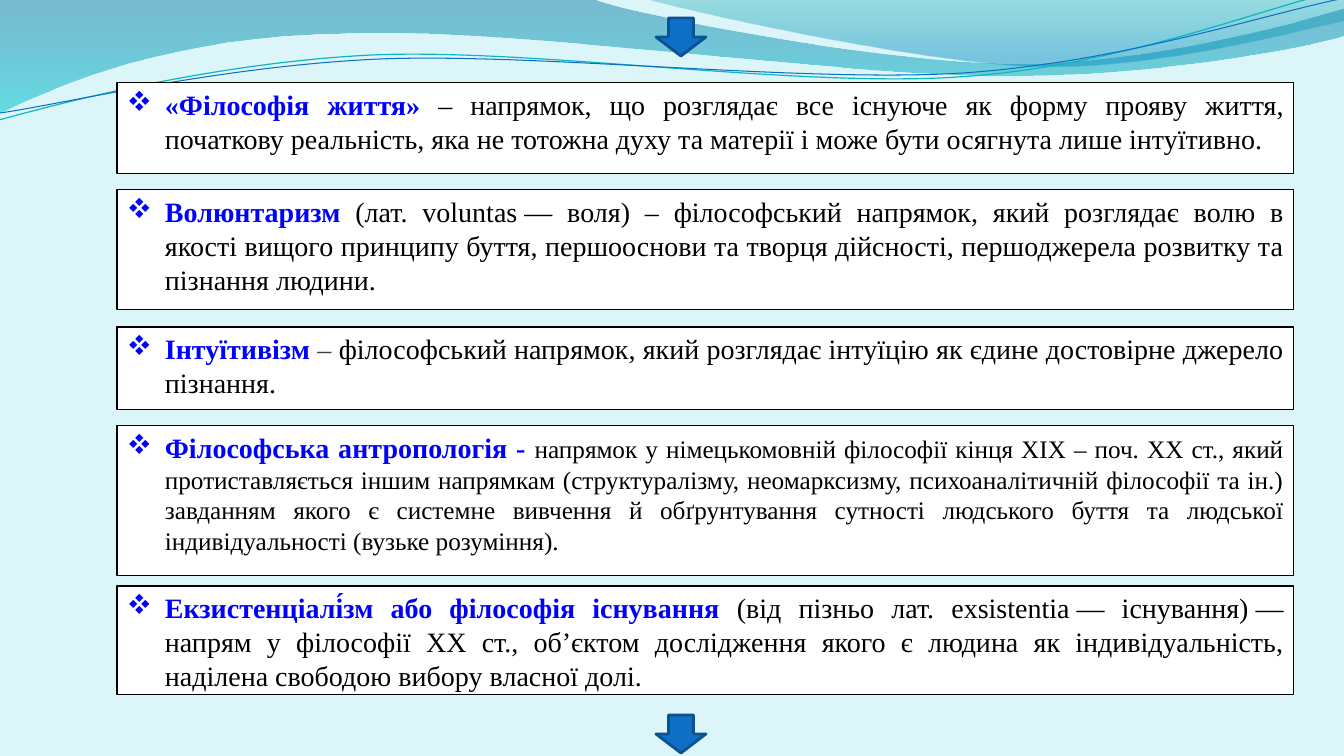
from math import cos, radians, sin
from lxml.etree import SubElement
from pptx import Presentation
from pptx.dml.color import RGBColor
from pptx.enum.shapes import MSO_SHAPE as Preset
from pptx.enum.text import MSO_ANCHOR as Anchor, PP_ALIGN as Align
from pptx.oxml.ns import qn
from pptx.util import Pt

# Content: top, height and spans (text, colour, size, bold) of each definition
BLUE, BLACK, GREY = "0000FF", "000000", "404040"
DEFINITIONS = [
    (83, 91, [
        ("«Філософія життя» ", BLUE, 20, True),
        ("– напрямок, що розглядає все існуюче як форму прояву життя, початкову реальність, "
         "яка не тотожна духу та матерії і може бути осягнута лише інтуїтивно.", BLACK, 20, False)]),
    (190, 120, [
        ("Волюнтаризм ", BLUE, 20, True),
        ("(лат. voluntas — воля) – філософський напрямок, який розглядає волю в якості вищого "
         "принципу буття, першооснови та творця дійсності, першоджерела розвитку та пізнання "
         "людини.", BLACK, 20, False)]),
    (327, 83, [
        ("Інтуїтивізм", BLUE, 20, True),
        (" – ", GREY, 20, False),
        ("філософський напрямок, який розглядає інтуїцію як єдине достовірне джерело пізнання.",
         BLACK, 20, False)]),
    (426, 150, [
        ("Філософська антропологія - ", BLUE, 20, True),
        ("напрямок у німецькомовній філософії кінця ХІХ – поч. ХХ ст., який протиставляється "
         "іншим напрямкам (структуралізму, неомарксизму, психоаналітичній філософії та ін.) "
         "завданням якого є системне вивчення й обґрунтування сутності людського буття та "
         "людської індивідуальності (вузьке розуміння).", BLACK, 18, False)]),
    (586, 109, [
        ("Екзистенціалі́зм або філософія існування ", BLUE, 20, True),
        ("(від пізньо лат. exsistentia — існування) — напрям у філософії ХХ ст., об’єктом "
         "дослідження якого є людина як індивідуальність, наділена свободою вибору власної "
         "долі.", BLACK, 20, False)]),
]
DASH_GAP = chr(160)  # keeps a dash on the line of the word before it
GLUED_DASHES = ("voluntas —", "exsistentia —", ") —")
ARROW_TOPS = [715, 18]

# Outlines: frame, then a start point, lines (one point) and curves (three points)
WAVES = [
    ((-1, -1, 1347, 115),
     [(-1, 0), [(592, -1)],
      [(639, 17), (892, 64), (1019, 64)], [(1146, 64), (1288, 26), (1344, 9)],
      [(1346, 36)],
      [(1322, 44), (1169, 77), (1002, 76)], [(836, 76), (513, 28), (346, 34)],
      [(173, 36), (61, 84), (-1, 114)], [(0, 0)]],
     [(0, "0074A1", 45), (1, "00C6CF", 55)]),
    ((644, -1, 700, 71),
     [(644, -1), [(684, 11), (916, 62), (1033, 66)], [(1150, 70), (1292, 32), (1344, 21)],
      [(1344, 0)], [(644, -1)]],
     [(0, "00A1A9", 30), (0.8, "008BBF", 45)]),
]
STRANDS = [
    ((-3, 22, 1347, 72),
     [(-1, 120), [(65, 102), (213, 63), (372, 55)], [(531, 48), (796, 88), (958, 77)],
      [(1119, 67), (1262, 8), (1342, -10)]], "0AB8BF", 0.85),
    ((-2, 30, 1349, 58),
     [(0, 113), [(64, 104), (220, 66), (381, 59)], [(541, 53), (802, 83), (963, 73)],
      [(1124, 62), (1265, 14), (1345, -2)]], "0F6FC6", 0.75),
]
STRAND_TURN = -2.7
SCALE = 12192000 / 1344


def px(length):
    return round(length * SCALE)


def rgb(value):
    return RGBColor.from_string(value)


def style(shape, fill=None, line=None, width=0.75):
    shape.shadow.inherit = False
    for part, colour in ((shape.fill, fill), (shape.line.fill, line)):
        if colour:
            part.solid()
            part.fore_color.rgb = rgb(colour)
        else:
            part.background()
    if line:
        shape.line.width = Pt(width)


def outline(page, frame, route, closed, turn=0):
    left, top, width, height = frame
    # The frame's rectangle sets place and size; its corners give way to the curves
    builder = page.shapes.build_freeform(px(left), px(top), 1.0)
    builder.add_line_segments([(px(left + width), px(top)),
                               (px(left + width), px(top + height))], close=False)
    shape = builder.convert_to_shape()
    shape.rotation = turn
    track = next(shape._element.iter(qn("a:path")))
    for corner in list(track):
        track.remove(corner)

    def add_step(tag, points):
        step = SubElement(track, qn(tag))
        for x, y in points:
            across, down = x - left - width / 2, y - top - height / 2
            angle = radians(-turn)
            SubElement(step, qn("a:pt"),
                       x=str(px(across * cos(angle) - down * sin(angle) + width / 2)),
                       y=str(px(across * sin(angle) + down * cos(angle) + height / 2)))

    add_step("a:moveTo", route[:1])
    for segment in route[1:]:
        add_step("a:lnTo" if len(segment) == 1 else "a:cubicBezTo", segment)
    if closed:
        SubElement(track, qn("a:close"))
    return shape


def add_wave(page, frame, route, stops):
    wave = outline(page, frame, route, True)
    style(wave)
    wave.fill.gradient()
    wave.fill.gradient_angle = 270
    for stop, (position, colour, _) in zip(wave.fill.gradient_stops, stops):
        stop.position = position
        stop.color.rgb = rgb(colour)
    for element, (_, _, opacity) in zip(wave._element.iter(qn("a:srgbClr")), stops):
        SubElement(element, qn("a:alpha"), val=str(opacity * 1000))


def add_definition(page, top, height, spans):
    box = page.shapes.add_shape(Preset.RECTANGLE, px(117), px(top), px(1177), px(height))
    style(box, "FFFFFF", BLACK)
    frame = box.text_frame
    frame.word_wrap = True
    frame.vertical_anchor = Anchor.TOP
    para = frame.paragraphs[0]
    para.alignment = Align.JUSTIFY
    # Hanging diamond bullet
    properties = para._p.get_or_add_pPr()
    properties.set("marL", str(px(38)))
    properties.set("indent", str(px(-38)))
    SubElement(properties, qn("a:buFont"), typeface="Wingdings", charset="2")
    SubElement(properties, qn("a:buChar"), char="v")
    for text, colour, size, bold in spans:
        for dash in GLUED_DASHES:
            text = text.replace(dash, dash.replace(" ", DASH_GAP))
        span = para.add_run()
        span.text = text
        span.font.color.rgb = rgb(colour)
        for name, value in {"name": "Times New Roman", "size": Pt(size), "bold": bold}.items():
            setattr(span.font, name, value)


def main():
    deck = Presentation()
    deck.slide_width, deck.slide_height = px(1344), px(756)
    page = deck.slides.add_slide(deck.slide_layouts[6])
    page.background.fill.solid()
    page.background.fill.fore_color.rgb = rgb("DBF5F9")

    # Waves along the top edge
    for frame, route, stops in WAVES:
        add_wave(page, frame, route, stops)
    for frame, route, colour, width in STRANDS:
        style(outline(page, frame, route, False, STRAND_TURN), None, colour, width)

    # Arrows and definitions
    for top in ARROW_TOPS:
        arrow = page.shapes.add_shape(Preset.DOWN_ARROW, px(656), px(top), px(50), px(38))
        style(arrow, "0F6FC6", "0B5292", 2)
    for top, height, spans in DEFINITIONS:
        add_definition(page, top, height, spans)

    deck.save("out.pptx")


if __name__ == "__main__":
    main()
